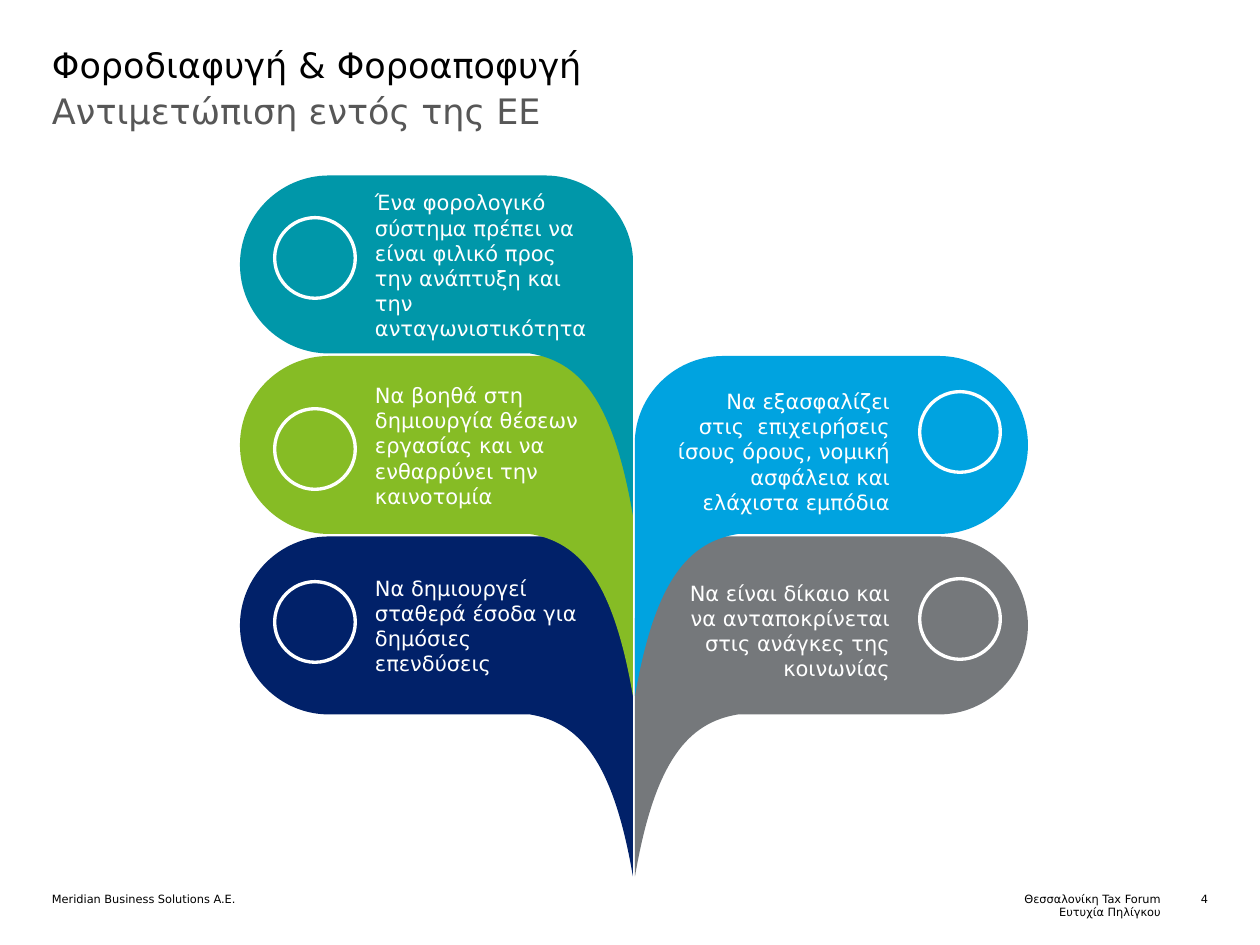
from dataclasses import dataclass

from lxml import etree
from pptx import Presentation
from pptx import util as u
from pptx.dml.color import RGBColor
from pptx.enum import shapes, text
from pptx.oxml import ns

PX_PER_INCH = 126


@dataclass(frozen=True)
class Theme:
    font: str = "DejaVu Sans"
    heading: float = 20
    label: float = 12
    footer: float = 6.5
    black: str = "000000"
    grey: str = "575757"
    white: str = "FFFFFF"
    teal: str = "0097A9"
    green: str = "86BC25"
    navy: str = "012169"
    blue: str = "00A3E0"
    slate: str = "75787B"


@dataclass(frozen=True)
class Box:
    left: int
    top: int
    width: int
    height: int


@dataclass(frozen=True)
class Side:
    stem: int
    direction: int
    label_left: int
    ring_left: int
    align: text.PP_ALIGN


@dataclass(frozen=True)
class Leaf:
    side: Side
    row: int
    color: str
    label_top: int
    ring_top: int
    label: str


THEME = Theme()
LEFT = Side(633, -1, 375, 273, text.PP_ALIGN.LEFT)
RIGHT = Side(635, 1, 676, 918, text.PP_ALIGN.RIGHT)
FIRST_ROW, ROW_PITCH = 175.5, 180.5
LABEL_WIDTH, LABEL_HEIGHT = 214, 83
RING_SIZE, RING_THICKNESS = 84, 0.04

LEAF_START = (0, 82)
LEAF_CURVES = [
    [(3, 36), (42, 0), (88, 0)],
    [(304, 0), (304, 0), (304, 0)],
    [(353, 0), (393, 40), (393, 89)],
    [(393, 138), (353, 178), (304, 178)],
    [(103, 178), (103, 178), (103, 178)],
    [(54, 186), (20, 223), (0, 340)],
]

LEAVES = [
    Leaf(LEFT, 2, THEME.navy, 584, 580,
         "Να δημιουργεί σταθερά έσοδα για δημόσιες επενδύσεις"),
    Leaf(LEFT, 1, THEME.green, 404, 407,
         "Να βοηθά στη δημιουργία θέσεων εργασίας και να ενθαρρύνει την καινοτομία"),
    Leaf(RIGHT, 2, THEME.slate, 589, 577,
         "Να είναι δίκαιο και να ανταποκρίνεται στις ανάγκες της κοινωνίας"),
    Leaf(RIGHT, 1, THEME.blue, 410, 390,
         "Να εξασφαλίζει στις  επιχειρήσεις ίσους όρους, νομική ασφάλεια και ελάχιστα εμπόδια"),
    Leaf(LEFT, 0, THEME.teal, 224, 216,
         "Ένα φορολογικό σύστημα πρέπει να είναι φιλικό προς την ανάπτυξη και την ανταγωνιστικότητα"),
]


def px(length: float) -> int:
    return round(length * u.Inches(1) / PX_PER_INCH)


def place(shape, box: Box) -> None:
    shape.left, shape.top = px(box.left), px(box.top)
    shape.width, shape.height = px(box.width), px(box.height)


def write(shape, lines: list[str], size: float, color: str,
          align=text.PP_ALIGN.LEFT, anchor=text.MSO_ANCHOR.TOP) -> None:
    frame = shape.text_frame
    frame.text = "\n".join(lines)
    frame.word_wrap = True
    frame.auto_size = text.MSO_AUTO_SIZE.NONE
    frame.vertical_anchor = anchor
    frame.margin_left = frame.margin_right = frame.margin_top = frame.margin_bottom = 0
    for paragraph in frame.paragraphs:
        paragraph.alignment = align
        paragraph.space_before = u.Pt(0)
        paragraph.font.name = THEME.font
        paragraph.font.size = u.Pt(size)
        paragraph.font.color.rgb = RGBColor.from_string(color)


def add_text(slide, box: Box, lines: list[str], size: float, color: str, **layout) -> None:
    label = slide.shapes.add_textbox(0, 0, 0, 0)
    place(label, box)
    write(label, lines, size, color, **layout)


def remove_bullets(shape) -> None:
    for paragraph in shape.text_frame.paragraphs:
        properties = paragraph._p.get_or_add_pPr()
        properties.set("marL", "0")
        properties.set("indent", "0")
        etree.SubElement(properties, ns.qn("a:buNone"))


def paint(shape, color: str) -> None:
    shape.shadow.inherit = False
    shape.fill.solid()
    shape.fill.fore_color.rgb = RGBColor.from_string(color)
    shape.line.fill.background()


def add_leaf(slide, leaf: Leaf) -> None:
    side = leaf.side
    top = FIRST_ROW + leaf.row * ROW_PITCH

    def on_slide(point: tuple[int, int]) -> tuple[int, int]:
        return px(side.stem + side.direction * point[0]), px(top + point[1])

    builder = slide.shapes.build_freeform(*on_slide(LEAF_START))
    builder.add_line_segments([on_slide(curve[-1]) for curve in LEAF_CURVES], close=True)
    blade = builder.convert_to_shape()
    paint(blade, leaf.color)

    segments = list(blade._element.iter(ns.qn("a:lnTo")))
    for segment, curve in zip(segments, LEAF_CURVES):
        bezier = etree.Element(ns.qn("a:cubicBezTo"))
        for x, y in map(on_slide, curve):
            etree.SubElement(bezier, ns.qn("a:pt"), x=str(x - blade.left), y=str(y - blade.top))
        segment.getparent().replace(segment, bezier)

    add_text(slide, Box(side.label_left, leaf.label_top, LABEL_WIDTH, LABEL_HEIGHT),
             [leaf.label], THEME.label, THEME.white,
             align=side.align, anchor=text.MSO_ANCHOR.MIDDLE)


def add_ring(slide, leaf: Leaf) -> None:
    ring = slide.shapes.add_shape(shapes.MSO_SHAPE.DONUT, 0, 0, 0, 0)
    place(ring, Box(leaf.side.ring_left, leaf.ring_top, RING_SIZE, RING_SIZE))
    ring.adjustments[0] = RING_THICKNESS
    paint(ring, THEME.white)


def main() -> None:
    deck = Presentation()
    deck.slide_width, deck.slide_height = u.Inches(10), u.Inches(7.5)
    slide = deck.slides.add_slide(deck.slide_layouts[1])

    title, subtitle = slide.shapes.title, slide.placeholders[1]
    place(title, Box(52, 43, 1157, 96))
    write(title, ["Φοροδιαφυγή & Φοροαποφυγή"], THEME.heading, THEME.black)
    place(subtitle, Box(52, 89, 1157, 105))
    write(subtitle, ["Αντιμετώπιση εντός της ΕΕ"], THEME.heading, THEME.grey)
    remove_bullets(subtitle)

    for leaf in LEAVES:
        add_leaf(slide, leaf)
    for leaf in LEAVES:
        add_ring(slide, leaf)

    add_text(slide, Box(52, 892, 553, 14), ["Meridian Business Solutions A.Ε."],
             THEME.footer, THEME.black)
    add_text(slide, Box(655, 892, 506, 28), ["Θεσσαλονίκη Tax Forum", "Ευτυχία Πηλίγκου"],
             THEME.footer, THEME.black, align=text.PP_ALIGN.RIGHT)
    add_text(slide, Box(1177, 892, 31, 14), ["4"],
             THEME.footer, THEME.black, align=text.PP_ALIGN.RIGHT)

    deck.save("out.pptx")


if __name__ == "__main__":
    main()
